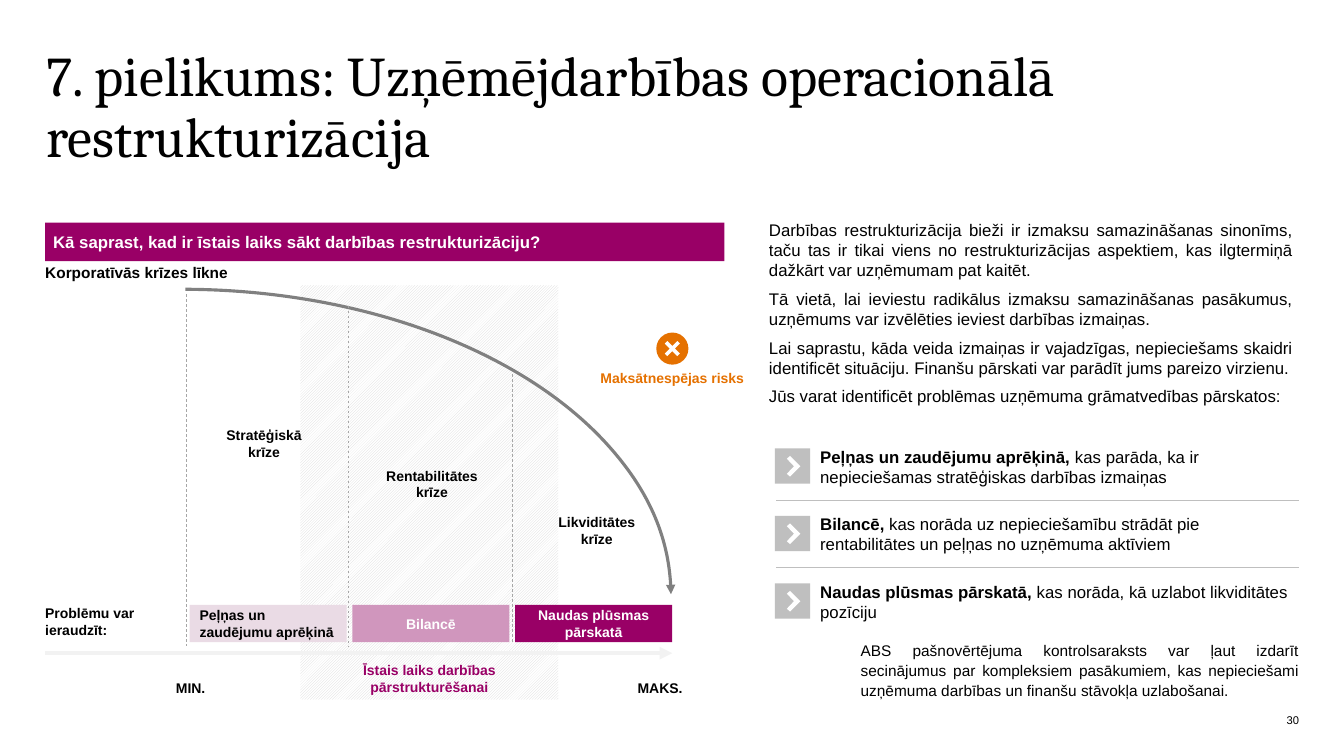
from lxml import etree
from pptx import Presentation
from pptx.dml.color import RGBColor
from pptx.enum.dml import MSO_LINE, MSO_PATTERN
from pptx.enum.shapes import MSO_CONNECTOR, MSO_SHAPE
from pptx.enum.text import MSO_ANCHOR, PP_ALIGN
from pptx.oxml.ns import qn
from pptx.util import Cm, Pt

RECT, OVAL, ARC, CROSS = MSO_SHAPE.RECTANGLE, MSO_SHAPE.OVAL, MSO_SHAPE.ARC, MSO_SHAPE.MATH_MULTIPLY
LEFT, MID, RIGHT, FULL = PP_ALIGN.LEFT, PP_ALIGN.CENTER, PP_ALIGN.RIGHT, PP_ALIGN.JUSTIFY
TOP, CENTRE, BASE = MSO_ANCHOR.TOP, MSO_ANCHOR.MIDDLE, MSO_ANCHOR.BOTTOM
BLACK, WHITE, PLUM, ORANGE, GREY = "000000", "FFFFFF", "990066", "E57100", "BFBFBF"


def tint(code):
    return RGBColor.from_string(code)


def write(shape, texts, size, color=BLACK, bold=False, align=LEFT, anchor=CENTRE, inset=0, face="Arial"):
    frame = shape.text_frame
    frame.word_wrap = True
    frame.vertical_anchor = anchor
    frame.margin_left = frame.margin_right = Cm(inset)
    frame.margin_top = frame.margin_bottom = Cm(min(inset, 0.1))
    for num, text in enumerate(texts):
        para = frame.add_paragraph() if num else frame.paragraphs[0]
        para.text = text
        para.alignment = align
        font = para.font
        font.name, font.size, font.bold = face, Pt(size), bold
        font.color.rgb = tint(color)
    return frame.paragraphs


deck = Presentation()
deck.slide_width, deck.slide_height = Cm(33.87), Cm(19.05)
slide = deck.slides.add_slide(deck.slide_layouts[6])
shapes = slide.shapes

title = shapes.add_textbox(Cm(1.17), Cm(0.91), Cm(31.57), Cm(3.66))
write(title, ["7. pielikums: Uzņēmējdarbības operacionālā restrukturizācija"], 40,
      face="Cambria")[0].line_spacing = 0.9

band = shapes.add_shape(RECT, Cm(7.57), Cm(7.19), Cm(6.5), Cm(10.44))
band.shadow.inherit = False
band.line.fill.background()
band.fill.patterned()
band.fill.pattern = MSO_PATTERN.LIGHT_UPWARD_DIAGONAL
band.fill.fore_color.rgb = tint("D9D9D9")
band.fill.back_color.rgb = tint(WHITE)
write(band, ["Īstais laiks darbības pārstrukturēšanai"], 10, PLUM, True, MID, BASE, 0.1)

bars = [
    (1.14, 5.61, 17.12, 0.97, "Kā saprast, kad ir īstais laiks sākt darbības restrukturizāciju?",
     12, PLUM, WHITE, LEFT, 0.2),
    (4.78, 15.24, 3.96, 0.94, "Peļņas un zaudējumu aprēķinā", 10, "EADBE5", BLACK, LEFT, 0.25),
    (8.88, 15.24, 3.96, 0.94, "Bilancē", 10, "D096BD", WHITE, MID, 0.25),
    (12.98, 15.24, 3.96, 0.94, "Naudas plūsmas pārskatā", 10, PLUM, WHITE, MID, 0.25),
]
for x, y, w, h, text, size, fill, color, align, inset in bars:
    bar = shapes.add_shape(RECT, Cm(x), Cm(y), Cm(w), Cm(h))
    bar.shadow.inherit = False
    bar.fill.solid()
    bar.fill.fore_color.rgb = tint(fill)
    bar.line.fill.background()
    write(bar, [text], size, color, True, align, inset=inset)

labels = [
    (5.36, 10.59, 2.59, 1.17, "Stratēģiskā krīze", 10, BLACK, MID, 0.2),
    (9.27, 11.61, 3.23, 1.17, "Rentabilitātes krīze", 10, BLACK, MID, 0.2),
    (13.82, 12.78, 2.44, 1.17, "Likviditātes krīze", 10, BLACK, MID, 0.2),
    (1.14, 15.19, 3.18, 0.94, "Problēmu var ieraudzīt:", 10, BLACK, LEFT, 0),
    (1.14, 6.63, 15.8, 0.48, "Korporatīvās krīzes līkne", 11, BLACK, LEFT, 0),
    (3.51, 17.02, 2.59, 0.61, "MIN.", 10, BLACK, MID, 0.2),
    (15.34, 17.02, 2.59, 0.61, "MAKS.", 10, BLACK, MID, 0.2),
    (14.78, 9.17, 4.32, 0.69, "Maksātnespējas risks", 10, ORANGE, MID, 0.2),
]
for x, y, w, h, text, size, color, align, inset in labels:
    label = shapes.add_textbox(Cm(x), Cm(y), Cm(w), Cm(h))
    write(label, [text], size, color, True, align, inset=inset)

curve = shapes.add_shape(ARC, Cm(-7.75), Cm(7.29), Cm(24.66), Cm(15.44))
curve.shadow.inherit = False
curve.adjustments[0], curve.adjustments[1] = 162.42, 215.9
curve.fill.background()
curve.line.color.rgb = tint("808080")
curve.line.width = Pt(2.25)

rules = [
    (4.7, 7.42, 4.7, 16.28, "A6A6A6", 0.5),
    (8.79, 7.7, 8.79, 16.28, "A6A6A6", 0.5),
    (12.9, 9.42, 12.9, 16.2, "A6A6A6", 0.5),
    (19.56, 12.6, 32.74, 12.6, GREY, 0.25),
    (19.56, 14.3, 32.74, 14.3, GREY, 0.25),
    (1.14, 16.46, 16.94, 16.46, "F2F2F2", 3),
]
for x, y, right, low, color, width in rules:
    rule = shapes.add_connector(MSO_CONNECTOR.STRAIGHT, Cm(x), Cm(y), Cm(right), Cm(low))
    rule.line.color.rgb = tint(color)
    rule.line.width = Pt(width)
    if x == right:
        rule.line.dash_style = MSO_LINE.DASH
    etree.SubElement(rule._element.spPr, qn("a:effectLst"))

for arrow in (curve, rule):
    etree.SubElement(arrow.line._get_or_add_ln(), qn("a:tailEnd"), type="triangle")

for kind, x, y, side, fill in [(OVAL, 16.54, 8.38, 0.81, ORANGE), (CROSS, 16.64, 8.48, 0.61, WHITE)]:
    mark = shapes.add_shape(kind, Cm(x), Cm(y), Cm(side), Cm(side))
    mark.shadow.inherit = False
    mark.fill.solid()
    mark.fill.fore_color.rgb = tint(fill)
    mark.line.fill.background()
mark.adjustments[0] = 0.15

body = shapes.add_textbox(Cm(19.38), Cm(5.54), Cm(13.21), Cm(4.75))
paras = write(body, [
    "Darbības restrukturizācija bieži ir izmaksu samazināšanas sinonīms, taču tas ir tikai viens no "
    "restrukturizācijas aspektiem, kas ilgtermiņā dažkārt var uzņēmumam pat kaitēt.",
    "Tā vietā, lai ieviestu radikālus izmaksu samazināšanas pasākumus, uzņēmums var izvēlēties "
    "ieviest darbības izmaiņas.",
    "Lai saprastu, kāda veida izmaiņas ir vajadzīgas, nepieciešams skaidri identificēt situāciju. "
    "Finanšu pārskati var parādīt jums pareizo virzienu.",
    "Jūs varat identificēt problēmas uzņēmuma grāmatvedības pārskatos:",
], 12, align=FULL, anchor=TOP)
for para in paras:
    para.space_after = Pt(6)

items = [
    ("Peļņas un zaudējumu aprēķinā,", " kas parāda, ka ir nepieciešamas stratēģiskas darbības izmaiņas"),
    ("Bilancē,", " kas norāda uz nepieciešamību strādāt pie rentabilitātes un peļņas no uzņēmuma aktīviem"),
    ("Naudas plūsmas pārskatā,", " kas norāda, kā uzlabot likviditātes pozīciju"),
]
points = [(0.38, 0.71), (0.64, 0.45), (0.38, 0.19), (0.3, 0.26), (0.48, 0.45), (0.3, 0.64)]
for num, (lead, rest) in enumerate(items):
    x, y = 19.53, 11.3 + 1.7 * num
    tile = shapes.add_shape(RECT, Cm(x), Cm(y), Cm(0.89), Cm(0.89))
    spots = [(Cm(x + across), Cm(y + down)) for across, down in points]
    pen = shapes.build_freeform(*spots[0])
    pen.add_line_segments(spots[1:])
    for part, fill in [(tile, GREY), (pen.convert_to_shape(), WHITE)]:
        part.shadow.inherit = False
        part.fill.solid()
        part.fill.fore_color.rgb = tint(fill)
        part.line.fill.background()
    note = shapes.add_textbox(Cm(20.42), Cm(y - 0.15), Cm(12.32), Cm(1.27))
    para = write(note, [lead], 12, bold=None, anchor=TOP, inset=0.25)[0]
    para.runs[0].font.bold = True
    para.add_run().text = rest

check = shapes.add_textbox(Cm(21.69), Cm(16.13), Cm(11.05), Cm(1.47))
write(check, [
    "ABS pašnovērtējuma kontrolsaraksts var ļaut izdarīt secinājumus par kompleksiem pasākumiem, "
    "kas nepieciešami uzņēmuma darbības un finanšu stāvokļa uzlabošanai.",
], 11, align=FULL, anchor=TOP)[0].line_spacing = 1.07

page = shapes.add_textbox(Cm(25.12), Cm(17.98), Cm(7.62), Cm(0.33))
write(page, ["30"], 8, align=RIGHT)

deck.save("out.pptx")
